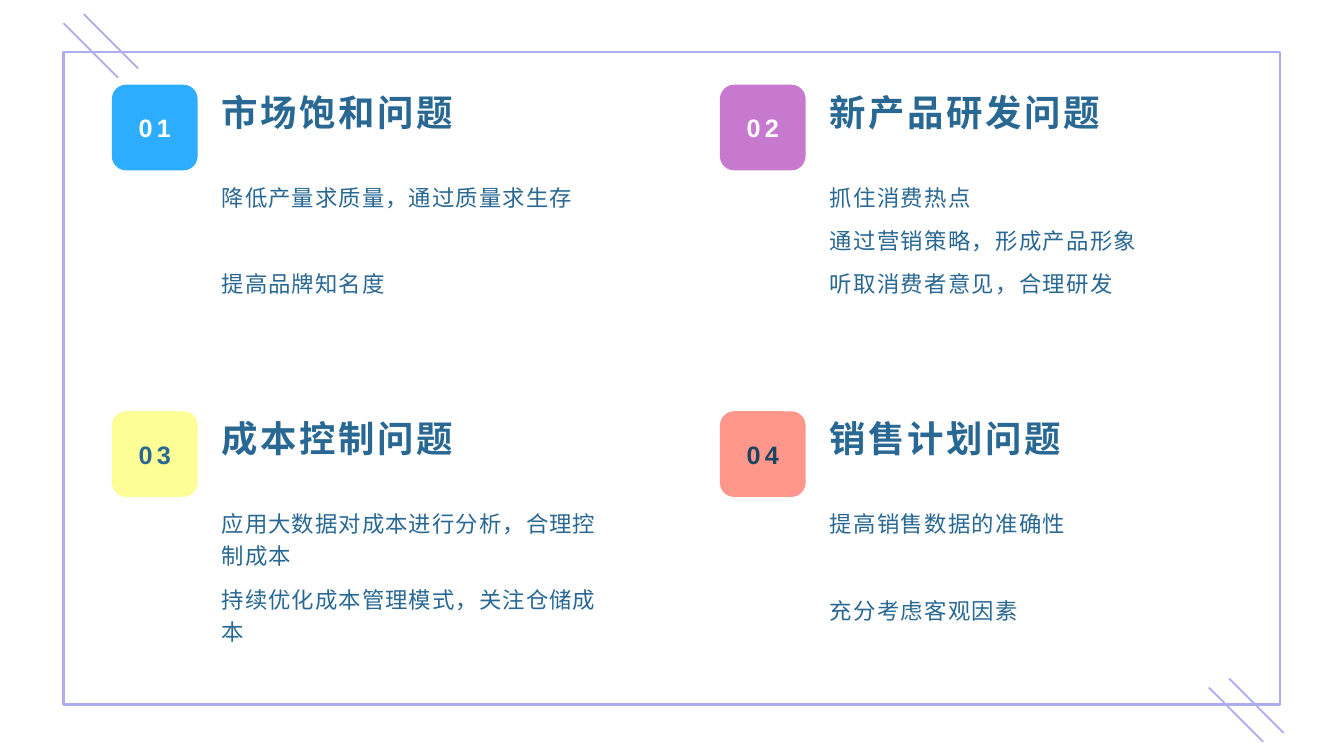
from lxml.etree import SubElement
from pptx import Presentation
from pptx.dml.color import RGBColor
from pptx.enum.shapes import MSO_CONNECTOR as Connector, MSO_SHAPE as Shape
from pptx.enum.text import MSO_ANCHOR as Anchor, PP_ALIGN as Align
from pptx.oxml.ns import qn
from pptx.util import Inches, Pt

LAVENDER, BLUE, NAVY, WHITE = "ADADED", "286893", "1A4460", "FFFFFF"


def colour(hex_code):
    return RGBColor.from_string(hex_code)


def style(paragraph, size, hex_code, spacing, bold=False):
    font = paragraph.font
    font.name, font.size, font.bold = "Arial", Pt(size), bold
    font.color.rgb = colour(hex_code)
    # Letter spacing is stored in hundredths of a point
    paragraph._p.get_or_add_pPr().get_or_add_defRPr().set("spc", str(round(spacing * 100)))


deck = Presentation()
deck.slide_width, deck.slide_height = Inches(13.33), Inches(7.5)
slide = deck.slides.add_slide(deck.slide_layouts[6])
shapes = slide.shapes

# Frame
frame = shapes.add_shape(Shape.RECTANGLE, Inches(0.63), Inches(0.52), Inches(12.07), Inches(6.47))
frame.shadow.inherit = False
frame.fill.background()
frame.line.color.rgb = colour(LAVENDER)
frame.line.width = Pt(1.5)

# Pairs of diagonal strokes across two corners of the frame
STROKE = 0.54
for x, y in [(0.83, 0.14), (0.63, 0.23), (12.19, 6.73), (11.99, 6.82)]:
    stroke = shapes.add_connector(Connector.STRAIGHT, Inches(x), Inches(y),
                                  Inches(x + STROKE), Inches(y + STROKE))
    stroke.line.color.rgb = colour(LAVENDER)
    stroke.line.width = Pt(1.25)
    SubElement(stroke._element.spPr, qn("a:effectLst"))

# Four problems on a two by two grid:
# heading, badge fill, number colour, letter spacing, space before later points, points
problems = [
    ("市场饱和问题", "2CADFF", WHITE, 0.8, 31,
     ["降低产量求质量，通过质量求生存", "提高品牌知名度"]),
    ("新产品研发问题", "C779D0", WHITE, 1, 0,
     ["抓住消费热点", "通过营销策略，形成产品形象", "听取消费者意见，合理研发"]),
    ("成本控制问题", "FDFF96", BLUE, 0.8, 0,
     ["应用大数据对成本进行分析，合理控制成本", "持续优化成本管理模式，关注仓储成本"]),
    ("销售计划问题", "FF968A", NAVY, 1, 31,
     ["提高销售数据的准确性", "充分考虑客观因素"]),
]
LEFT, TOP, COLUMN, ROW = 1.11, 0.84, 6.03, 3.24
BADGE, TEXT_OFFSET, TEXT_WIDTH = 0.85, 0.99, 4.09

for index, (title, fill, number_colour, spacing, gap, points) in enumerate(problems):
    row, column = divmod(index, 2)
    x, y = LEFT + column * COLUMN, TOP + row * ROW
    text_x = Inches(x + TEXT_OFFSET)

    # Numbered badge
    badge = shapes.add_shape(Shape.ROUNDED_RECTANGLE, Inches(x), Inches(y),
                             Inches(BADGE), Inches(BADGE))
    badge.shadow.inherit = False
    badge.fill.solid()
    badge.fill.fore_color.rgb = colour(fill)
    badge.line.fill.background()
    label = badge.text_frame
    label.margin_left = label.margin_right = label.margin_top = label.margin_bottom = 0
    label.vertical_anchor = Anchor.MIDDLE
    number = label.paragraphs[0]
    number.text = f"{index + 1:02}"
    number.alignment = Align.CENTER
    style(number, 18, number_colour, 3, bold=True)

    # Heading
    heading = shapes.add_textbox(text_x, Inches(y), Inches(TEXT_WIDTH), Inches(BADGE)).text_frame
    heading.word_wrap = True
    heading.text = title
    style(heading.paragraphs[0], 26, BLUE, 1.8, bold=True)

    # Points
    body = shapes.add_textbox(text_x, Inches(y + 0.88), Inches(TEXT_WIDTH), Inches(1.71)).text_frame
    body.word_wrap = True
    body.text = "\n".join(points)
    for position, point in enumerate(body.paragraphs):
        point.line_spacing = 1.2
        point.space_before = Pt(gap if position else 0)
        point.space_after = Pt(8)
        style(point, 16, BLUE, spacing)

deck.save("out.pptx")
